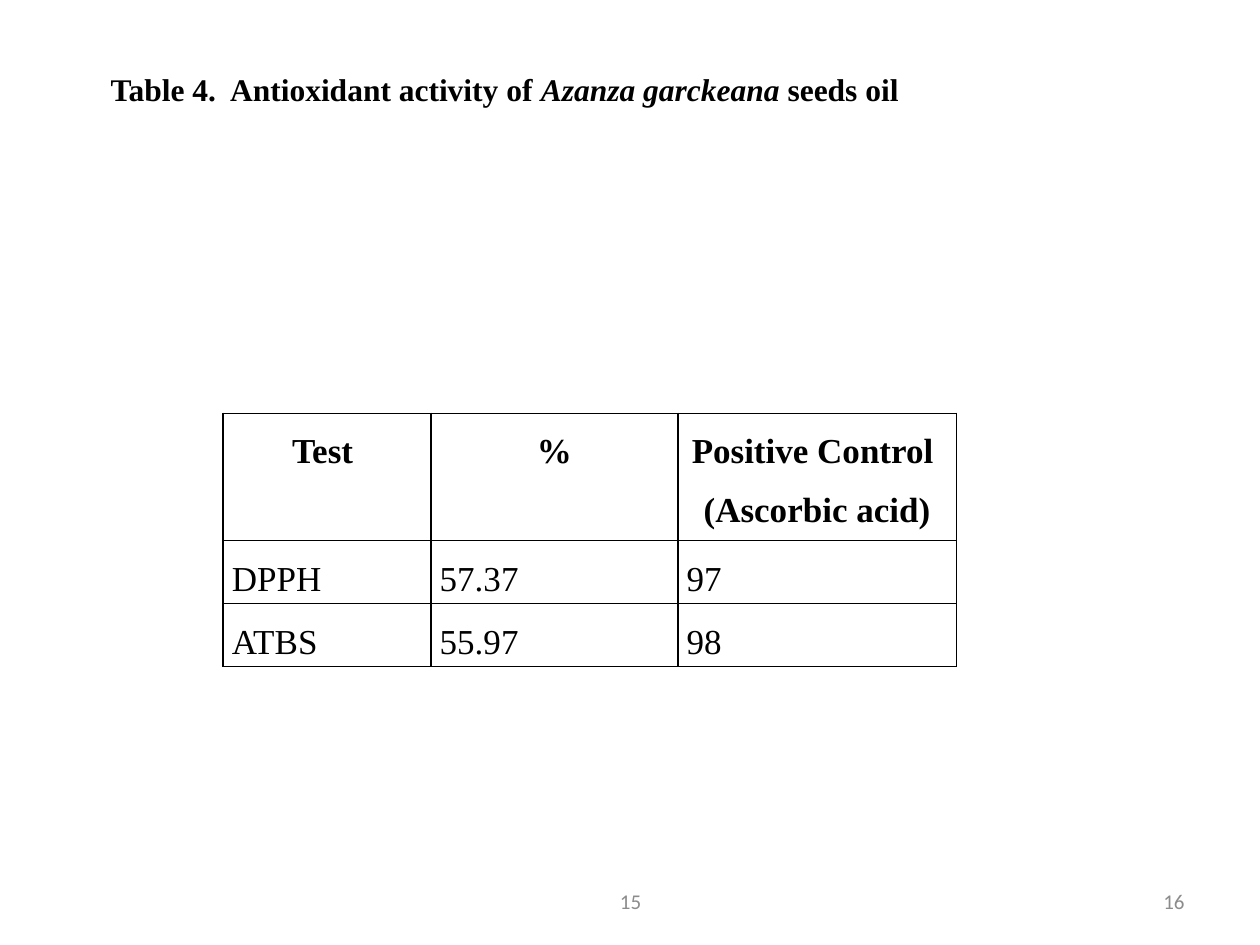
from lxml import etree
from pptx import Presentation
from pptx.dml.color import RGBColor
from pptx.enum.text import MSO_ANCHOR, PP_ALIGN
from pptx.oxml.ns import qn
from pptx.util import Inches, Pt

LEFT, CENTER, RIGHT = PP_ALIGN.LEFT, PP_ALIGN.CENTER, PP_ALIGN.RIGHT
TOP, MIDDLE = MSO_ANCHOR.TOP, MSO_ANCHOR.MIDDLE
COLORS = {"text": "000000", "border": "000000", "number": "8C8C8C"}
SERIF, SANS = "Times New Roman", "Calibri"
TITLE = [
    ("Table 4.  Antioxidant activity of ", False),
    ("Azanza garckeana", True),
    (" seeds oil", False),
]
ROWS = [
    ["Test ", "%", "Positive Control \n(Ascorbic acid)"],
    ["DPPH", "57.37", "97"],
    ["ATBS", "55.97", "98"],
]
COL_WIDTHS = [1.65, 1.96, 2.21]
ROW_HEIGHTS = [1.01, 0.49, 0.49]


def set_attrs(obj, values):
    """Set each attribute of obj from a dict."""
    for name, value in values.items():
        setattr(obj, name, value)


def add_run(p, text, color, **fmt):
    """Add a formatted run to a paragraph."""
    r = p.add_run()
    r.text = text
    r.font.color.rgb = RGBColor.from_string(COLORS[color])
    set_attrs(r.font, fmt)


def add_box(slide, box, anchor):
    """Add a wrapping text box and return its text frame."""
    tf = slide.shapes.add_textbox(*map(Inches, box)).text_frame
    set_attrs(tf, {"word_wrap": True, "vertical_anchor": anchor})
    return tf


def add_title(slide, box):
    """Add the table caption with the species name in italics."""
    p = add_box(slide, box, TOP).paragraphs[0]
    set_attrs(p, {"alignment": CENTER, "line_spacing": 1.5})
    for text, italic in TITLE:
        add_run(p, text, "text", name=SERIF, size=Pt(18), bold=True, italic=italic)


def add_borders(cell):
    """Draw a solid line on all four sides of a cell."""
    tcPr = cell._tc.get_or_add_tcPr()
    for i, side in enumerate(("lnL", "lnR", "lnT", "lnB")):
        ln = etree.Element(qn(f"a:{side}"), w=str(Pt(1)))
        fill = etree.SubElement(ln, qn("a:solidFill"))
        etree.SubElement(fill, qn("a:srgbClr"), val=COLORS["border"])
        tcPr.insert(i, ln)


def fill_cell(cell, text, header):
    """Write and format one table cell."""
    set_attrs(cell, {
        "margin_left": Inches(0.07), "margin_right": Inches(0.07),
        "margin_top": 0, "margin_bottom": 0, "vertical_anchor": TOP,
    })
    cell.fill.background()
    add_borders(cell)
    tf = cell.text_frame
    for i, line in enumerate(text.split("\n")):
        p = tf.add_paragraph() if i else tf.paragraphs[0]
        set_attrs(p, {"alignment": CENTER if header else LEFT, "line_spacing": 1.5})
        add_run(p, line, "text", name=SERIF, size=Pt(20), bold=header)


def add_results(slide, left, top):
    """Add the antioxidant results table."""
    size = (sum(COL_WIDTHS), sum(ROW_HEIGHTS))
    table = slide.shapes.add_table(
        len(ROWS), len(COL_WIDTHS), *map(Inches, (left, top, *size))
    ).table
    set_attrs(table, {"first_row": False, "horz_banding": False})
    for col, width in zip(table.columns, COL_WIDTHS):
        col.width = Inches(width)
    for i, (row, height) in enumerate(zip(table.rows, ROW_HEIGHTS)):
        row.height = Inches(height)
        for cell, text in zip(row.cells, ROWS[i]):
            fill_cell(cell, text, i == 0)


def add_number(slide, box, text, align):
    """Add a grey footer number."""
    p = add_box(slide, box, MIDDLE).paragraphs[0]
    p.alignment = align
    add_run(p, text, "number", name=SANS, size=Pt(12))


def main():
    """Build and save the slide."""
    prs = Presentation()
    set_attrs(prs, {"slide_width": Inches(10), "slide_height": Inches(7.5)})
    slide = prs.slides.add_slide(prs.slide_layouts[6])
    add_title(slide, (0.51, 0.36, 6.99, 1.01))
    add_results(slide, 1.77, 3.28)
    add_number(slide, (7.17, 6.95, 2.33, 0.4), "16", RIGHT)
    add_number(slide, (3.42, 6.95, 3.17, 0.4), "15", CENTER)
    prs.save("out.pptx")


if __name__ == "__main__":
    main()
